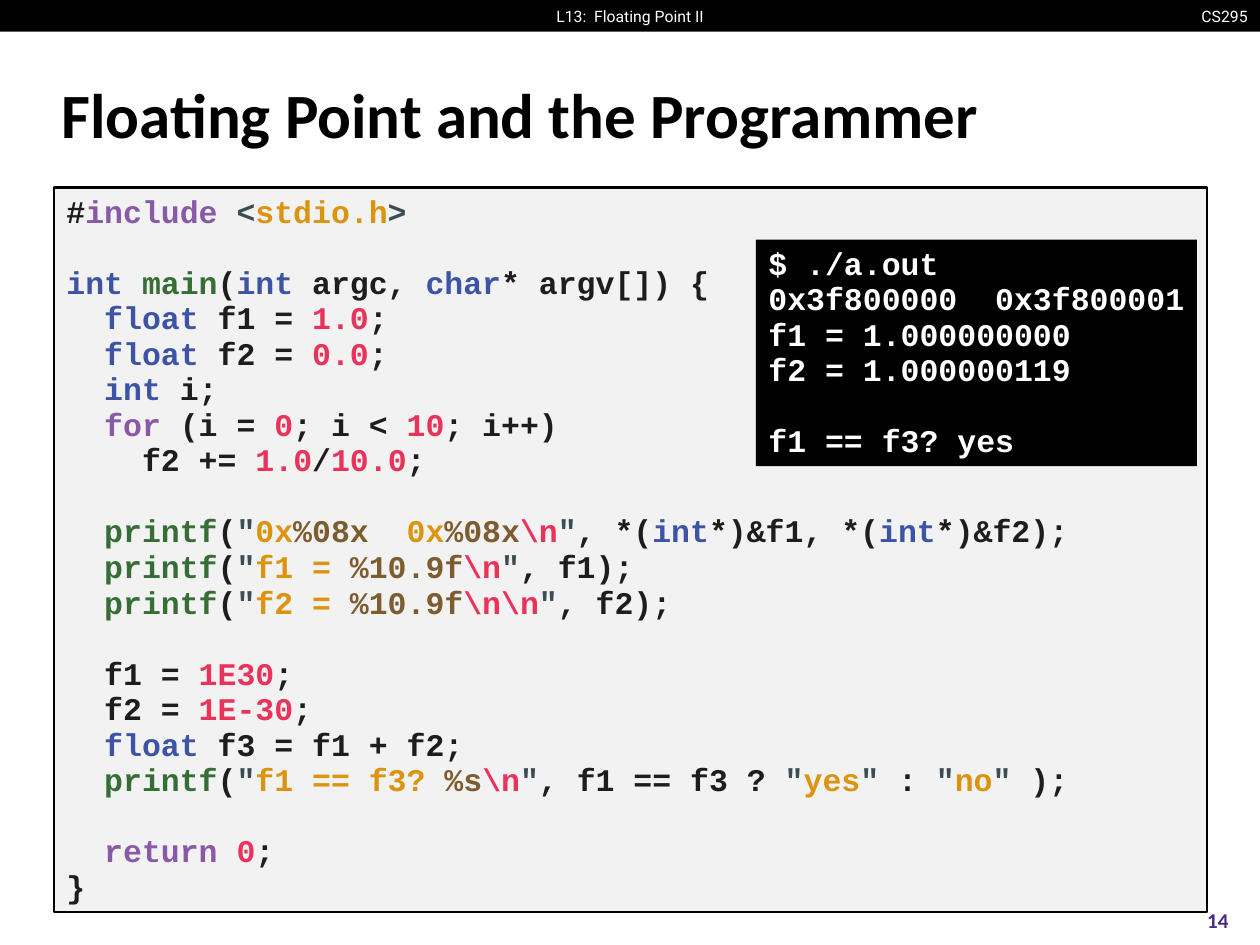
from copy import deepcopy

from pptx import Presentation
from pptx.dml.color import RGBColor
from pptx.enum.shapes import MSO_SHAPE
from pptx.enum.text import MSO_ANCHOR, PP_ALIGN
from pptx.oxml.ns import qn
from pptx.util import Cm, Pt

RECTANGLE = MSO_SHAPE.RECTANGLE
TOP, MIDDLE = MSO_ANCHOR.TOP, MSO_ANCHOR.MIDDLE
LEFT, CENTER, RIGHT = PP_ALIGN.LEFT, PP_ALIGN.CENTER, PP_ALIGN.RIGHT

COLORS = {
    "black": "000000",
    "white": "FFFFFF",
    "panel": "F2F2F2",
    "page": "4B2A85",
    "x": "1D1D1C",
    "key": "8959A8",
    "mark": "3B4D53",
    "str": "DC930E",
    "type": "3C53A6",
    "func": "366E36",
    "num": "E9335B",
    "fmt": "7D5D2F",
}

CODE_LINES = [
    "x:#|key:include |mark:<|str:stdio.h|mark:>",
    "",
    "type:int |func:main|x:(|type:int |x:argc, |type:char|x:* argv[]) {",
    "x:  |type:float|x: f1 = |num:1.0|x:;",
    "x:  |type:float|x: f2 = |num:0.0|x:;",
    "x:  |type:int |x:i;",
    "x:  |key:for |x:(i = |num:0|x:; i < |num:10|x:; i++)",
    "x:    f2 += |num:1.0|x:/|num:10.0|x:;",
    "",
    'x:  |func:printf|x:(|mark:"|str:0x|fmt:%08x|str:  0x|fmt:%08x|num:\\n|mark:"'
    "|x:, *(|type:int|x:*)&f1, *(|type:int|x:*)&f2);",
    'x:  |func:printf|x:(|mark:"|str:f1 = |fmt:%10.9f|num:\\n|mark:"|x:, f1);',
    'x:  |func:printf|x:(|mark:"|str:f2 = |fmt:%10.9f|num:\\n\\n|mark:"|x:, f2);',
    "",
    "x:  f1 = |num:1E30|x:;",
    "x:  f2 = |num:1E-30|x:;",
    "x:  |type:float|x: f3 = f1 + f2;",
    'x:  |func:printf|x:(|mark:"|str:f1 == f3? |fmt:%s|num:\\n|mark:"'
    '|x:, f1 == f3 ? |mark:"|str:yes|mark:"|x: : |mark:"|str:no|mark:"|x: );',
    "",
    "x:  |key:return |num:0|x:;",
    "x:}",
]

OUTPUT_LINES = [
    "$ ./a.out",
    "0x3f800000  0x3f800001",
    "f1 = 1.000000000",
    "f2 = 1.000000119",
    "f1 == f3? yes",
]


def rgb(name):
    return RGBColor.from_string(COLORS[name])


def style_run(run, font_name, size, color, bold=False):
    run.font.name = font_name
    run.font.size = Pt(size)
    run.font.bold = bold
    run.font.color.rgb = rgb(color)


def add_panel(slide, box, fill, border=None):
    panel = slide.shapes.add_shape(RECTANGLE, *map(Cm, box))
    panel.shadow.inherit = False
    panel.fill.solid()
    panel.fill.fore_color.rgb = rgb(fill)
    if border:
        panel.line.color.rgb = rgb(border)
        panel.line.width = Pt(1.5)
    else:
        panel.line.fill.background()
    frame = panel.text_frame
    frame.vertical_anchor = TOP
    frame.margin_left = frame.margin_right = Cm(0.25)
    frame.margin_top, frame.margin_bottom = Cm(0.15), Cm(0.13)
    return frame


def add_label(slide, box, text, align, font_name, size, color, bold=False):
    frame = slide.shapes.add_textbox(*map(Cm, box)).text_frame
    frame.word_wrap = True
    frame.vertical_anchor = MIDDLE
    frame.text = text
    paragraph = frame.paragraphs[0]
    paragraph.alignment = align
    style_run(paragraph.runs[0], font_name, size, color, bold)


def add_header(slide, box):
    left, top, width, height = box
    add_panel(slide, box, "black")
    course_width, lecture_width = 1.5, 4.92
    add_label(slide, (left + width - course_width, top, course_width, height),
              "CS295", RIGHT, "Roboto", 9, "white")
    add_label(slide, (left + (width - lecture_width) / 2, top, lecture_width, height),
              "L13:  Floating Point II", CENTER, "Roboto", 9, "white")


def add_title(slide, box):
    title = slide.shapes.title
    title.left, title.top, title.width, title.height = map(Cm, box)
    frame = title.text_frame
    frame.vertical_anchor = MIDDLE
    frame.text = "Floating Point and the Programmer"
    paragraph = frame.paragraphs[0]
    paragraph.alignment = LEFT
    style_run(paragraph.runs[0], "Calibri", 36, "black", True)


def add_code(slide, box):
    frame = add_panel(slide, box, "panel", "black")
    frame.word_wrap = True
    listing = frame.paragraphs[0]
    listing.alignment = LEFT
    listing.line_spacing = 0.94
    for number, line in enumerate(CODE_LINES):
        if number:
            listing.add_line_break()
        for token in filter(None, line.split("|")):
            kind, text = token.split(":", 1)
            run = listing.add_run()
            run.text = text
            style_run(run, "Courier New", 18, kind, True)
    run_format = listing._p.find(qn("a:r")).find(qn("a:rPr"))
    for line_break in listing._p.findall(qn("a:br")):
        line_break.insert(0, deepcopy(run_format))


def add_output(slide, box):
    frame = add_panel(slide, box, "black")
    frame.word_wrap = False
    frame.text = "\n".join(OUTPUT_LINES)
    for paragraph in frame.paragraphs:
        paragraph.alignment = LEFT
        paragraph.line_spacing = 0.94
        style_run(paragraph.runs[0], "Courier New", 18, "white", True)
    frame.paragraphs[-1].space_before = Pt(20)


def main():
    deck = Presentation()
    deck.slide_width, deck.slide_height = Cm(25.4), Cm(19.05)
    slide = deck.slides.add_slide(deck.slide_layouts[5])
    add_header(slide, (0, 0, 25.4, 0.64))
    add_title(slide, (0.99, 1.22, 23.34, 2.11))
    add_label(slide, (23.7, 18.03, 1.7, 1.02), "14", CENTER, "Calibri", 12, "page", True)
    add_code(slide, (1.09, 3.78, 23.24, 14.61))
    add_output(slide, (15.24, 4.83, 8.89, 4.57))
    deck.save("out.pptx")


if __name__ == "__main__":
    main()
